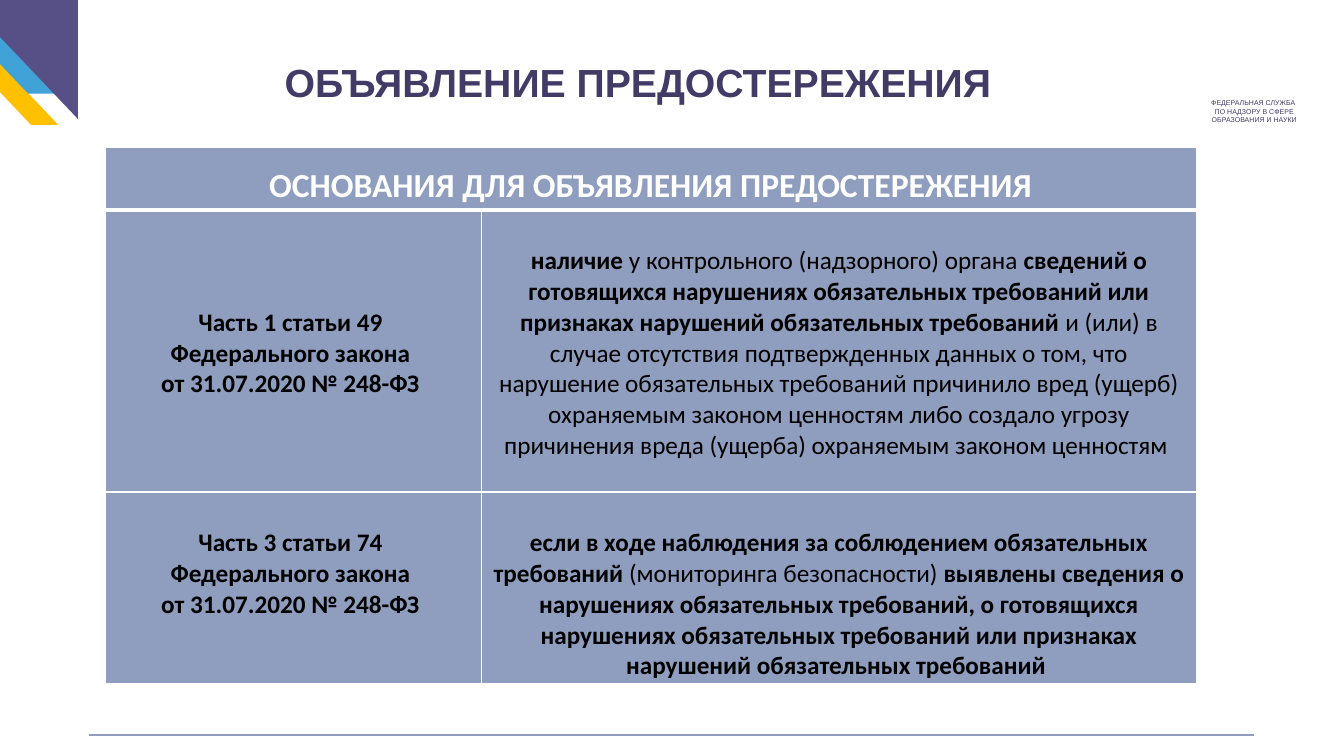
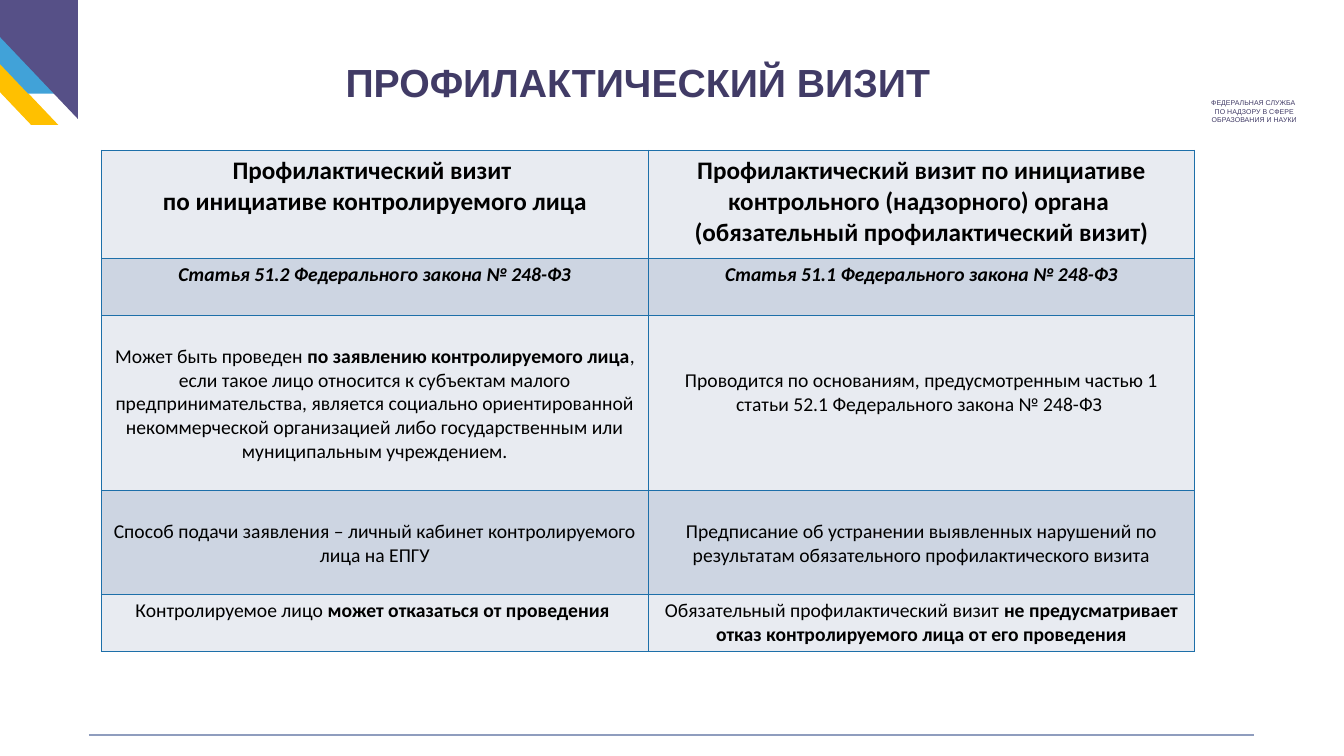
from collections import namedtuple
from dataclasses import dataclass

from lxml.etree import SubElement
from pptx import Presentation
from pptx.dml.color import RGBColor
from pptx.enum.shapes import MSO_CONNECTOR as Connector, MSO_SHAPE as Preset
from pptx.enum.text import MSO_ANCHOR as Anchor, PP_ALIGN as Align
from pptx.oxml.ns import qn
from pptx.util import Pt

Box = namedtuple("Box", "left top width height")

PURPLE, BLUE, AMBER = "565087", "41A2D8", "FFC000"
INK, STEEL, WHITE, BLACK = "413B66", "8F9DBE", "FFFFFF", "000000"
PALE, MIST, GRID_BLUE = "E8EBF1", "CDD5E2", "1D6FA9"
HEADING_FONT, TABLE_FONT = "Arial", "Calibri"
LINE_FACTOR = 1.22

CORNER = Box(-62, -19.5, 118, 109)
AGENCY = Box(847.5, 67, 97, 25)
TITLE = Box(65.5, 38.2, 780, 41)
FOOTER = Box(63.5, 525, 832, 0)


@dataclass
class CellText:
    """Paragraphs of one cell; asterisks enclose bold words, gap is space above."""
    lines: list
    size: float
    gap: float = 0
    italic: bool = False
    color: str = BLACK


def rgb(value):
    """Turn a hex string into a colour."""
    return RGBColor.from_string(value)


def style_paragraph(paragraph, font_name, size, color):
    """Centre a paragraph and set its font."""
    paragraph.alignment = Align.CENTER
    font = paragraph.font
    font.name, font.size = font_name, Pt(size)
    font.color.rgb = rgb(color)
    return font


def add_heading(slide, box, lines, size, bold=False):
    """Add centred text in the heading font."""
    shape = slide.shapes.add_textbox(*map(Pt, box))
    frame = shape.text_frame
    frame.word_wrap = True
    frame.vertical_anchor = Anchor.MIDDLE if bold else Anchor.TOP
    frame.text = "\n".join(lines)
    for paragraph in frame.paragraphs:
        style_paragraph(paragraph, HEADING_FONT, size, INK).bold = bold


def add_corner(slide, box):
    """Draw the overlapping stripes and triangle of the corner."""
    parts = [
        (Preset.PARALLELOGRAM, Box(2.2, 22.4, 101.5, 86.4), AMBER, False),
        (Preset.PARALLELOGRAM, Box(0, 0, 101.5, 86.4), BLUE, False),
        (Preset.RIGHT_TRIANGLE, Box(36.3, 18.8, 81.4, 85.7), PURPLE, True),
    ]
    for preset, part, color, upside_down in parts:
        shape = slide.shapes.add_shape(
            preset, Pt(box.left + part.left), Pt(box.top + part.top),
            Pt(part.width), Pt(part.height))
        shape.shadow.inherit = False
        shape.fill.solid()
        shape.fill.fore_color.rgb = rgb(color)
        shape.line.fill.background()
        transform = shape._element.spPr.find(qn("a:xfrm"))
        transform.set("flipH", "1")
        if upside_down:
            transform.set("flipV", "1")
        else:
            shape.adjustments[0] = 0.95


def add_footer(slide, box):
    """Draw the rule at the foot of the slide."""
    line = slide.shapes.add_connector(
        Connector.STRAIGHT, Pt(box.left), Pt(box.top),
        Pt(box.left + box.width), Pt(box.top))
    line.line.color.rgb = rgb(STEEL)
    line.line.width = Pt(1.5)
    SubElement(line._element.spPr, qn("a:effectLst"))


def add_slide(presentation, title):
    """Add a slide with the shared corner, agency name, title and footer."""
    slide = presentation.slides.add_slide(presentation.slide_layouts[6])
    add_corner(slide, CORNER)
    add_heading(slide, AGENCY, ["ФЕДЕРАЛЬНАЯ СЛУЖБА ",
                                "ПО НАДЗОРУ В СФЕРЕ ОБРАЗОВАНИЯ И НАУКИ"], 5)
    add_heading(slide, TITLE, [title], 28, bold=True)
    add_footer(slide, FOOTER)
    return slide


def set_borders(cell, color, widths):
    """Set the cell's left, right, top and bottom lines."""
    properties = cell._tc.get_or_add_tcPr()
    for side, width in zip("LRTB", widths):
        line = SubElement(properties, qn(f"a:ln{side}"), w=str(Pt(width)))
        fill = SubElement(line, qn("a:solidFill"))
        SubElement(fill, qn("a:srgbClr"), val=color)


def fill_cell(cell, content, fill):
    """Write a cell's paragraphs over a plain fill."""
    cell.fill.solid()
    cell.fill.fore_color.rgb = rgb(fill)
    cell.margin_top, cell.margin_bottom = Pt(3.6 + content.gap * LINE_FACTOR), 0
    frame = cell.text_frame
    for index, text in enumerate(content.lines):
        paragraph = frame.add_paragraph() if index else frame.paragraphs[0]
        font = style_paragraph(paragraph, TABLE_FONT, content.size, content.color)
        font.italic = content.italic
        for position, piece in enumerate(text.split("*")):
            if piece:
                run = paragraph.add_run()
                run.text = piece
                run.font.bold = position % 2 == 1


def add_grid(slide, left, top, columns, heights, rows, fills, border, header_rule=1):
    """Add a table; a row with one entry spans all columns."""
    shape = slide.shapes.add_table(
        len(rows), len(columns), Pt(left), Pt(top), Pt(sum(columns)), Pt(sum(heights)))
    table = shape.table
    table.first_row = table.horz_banding = False
    for column, width in zip(table.columns, columns):
        column.width = Pt(width)
    for index, (contents, height) in enumerate(zip(rows, heights)):
        table.rows[index].height = Pt(height)
        if len(contents) == 1:
            table.cell(index, 0).merge(table.cell(index, len(columns) - 1))
        widths = (1, 1, header_rule if index == 1 else 1, header_rule if index == 0 else 1)
        for position in range(len(columns)):
            set_borders(table.cell(index, position), border, widths)
        for position, content in enumerate(contents):
            fill_cell(table.cell(index, position), content, fills[index % len(fills)])


def law_article(article, gap):
    """Give the cell text that cites an article of the law."""
    return CellText([f"*{article} *", "*Федерального закона *",
                     "*от 31.07.2020 № 248-ФЗ *"], 18, gap)


def build_warning(presentation):
    """Build the slide on grounds for a warning."""
    slide = add_slide(presentation, "ОБЪЯВЛЕНИЕ ПРЕДОСТЕРЕЖЕНИЯ")
    rows = [
        [CellText(["*ОСНОВАНИЯ ДЛЯ ОБЪЯВЛЕНИЯ ПРЕДОСТЕРЕЖЕНИЯ*"], 24, 8, color=WHITE)],
        [law_article("Часть 1 статьи 49", 54),
         CellText(["*наличие *у контрольного (надзорного) органа *сведений о готовящихся "
                   "нарушениях обязательных требований или признаках нарушений обязательных "
                   "требований *и (или) в случае отсутствия подтвержденных данных о том, что "
                   "нарушение обязательных требований причинило вред (ущерб) охраняемым "
                   "законом ценностям либо создало угрозу причинения вреда (ущерба) "
                   "охраняемым законом ценностям "], 18, 18)],
        [law_article("Часть 3 статьи 74", 18),
         CellText(["*если в ходе наблюдения за соблюдением обязательных требований "
                   "*(мониторинга безопасности) *выявлены сведения о нарушениях обязательных "
                   "требований, о готовящихся нарушениях обязательных требований или "
                   "признаках нарушений обязательных требований *"], 18, 18)],
    ]
    add_grid(slide, 75, 105, [269, 510.5], [45, 201.5, 137], rows, [STEEL], WHITE, 3)


def build_visit(presentation):
    """Build the slide comparing the two kinds of preventive visit."""
    slide = add_slide(presentation, "ПРОФИЛАКТИЧЕСКИЙ ВИЗИТ")
    rows = [
        [CellText(["*Профилактический визит *", "*по инициативе контролируемого лица*"], 18),
         CellText(["*Профилактический визит по инициативе контрольного (надзорного) органа *",
                   "*(обязательный профилактический визит)*"], 18)],
        [CellText([f"*Статья {number} Федерального закона № 248-ФЗ*"], 14, italic=True)
         for number in ("51.2", "51.1")],
        [CellText(["Может быть проведен *по заявлению контролируемого лица*, если такое лицо "
                   "относится к субъектам малого предпринимательства, является социально "
                   "ориентированной некоммерческой организацией либо государственным или "
                   "муниципальным учреждением."], 14, 14),
         CellText(["Проводится по основаниям, предусмотренным частью 1 статьи 52.1 "
                   "Федерального закона № 248-ФЗ "], 14, 28)],
        [CellText(["Способ подачи заявления – личный кабинет контролируемого лица на ЕПГУ"],
                  14, 14),
         CellText(["Предписание об устранении выявленных нарушений по результатам "
                   "обязательного профилактического визита"], 14, 14)],
        [CellText(["Контролируемое лицо *может отказаться от проведения *"], 14),
         CellText(["Обязательный профилактический визит *не предусматривает отказ "
                   "контролируемого лица от его проведения*"], 14)],
    ]
    add_grid(slide, 72.5, 107.5, [390.5] * 2, [77, 41, 125, 74, 41], rows,
             [PALE, MIST], GRID_BLUE)


def main():
    """Build and save the presentation."""
    presentation = Presentation()
    presentation.slide_width, presentation.slide_height = Pt(960), Pt(540)
    build_warning(presentation)
    build_visit(presentation)
    presentation.save("out.pptx")


if __name__ == "__main__":
    main()
